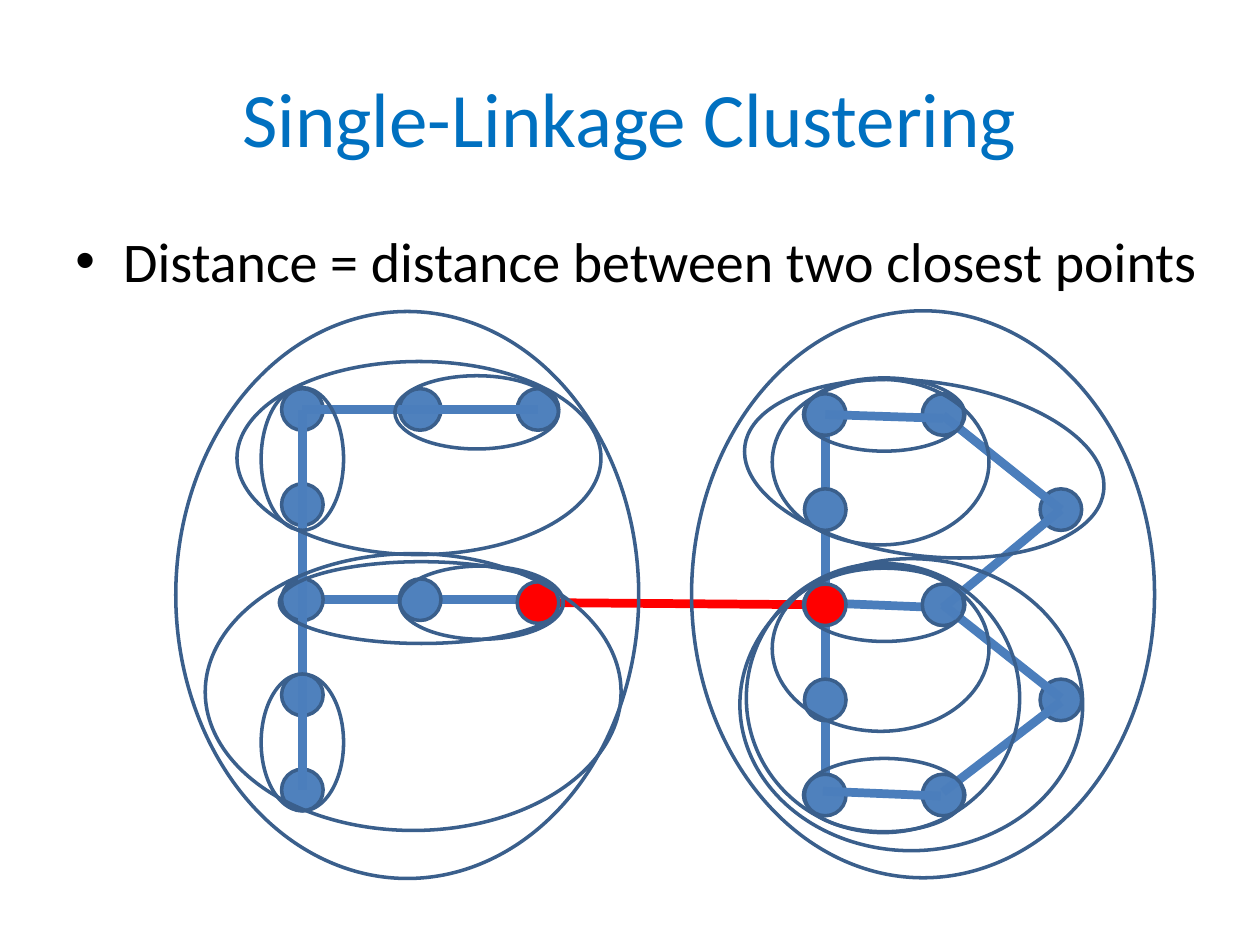
from dataclasses import dataclass
from typing import NamedTuple

from lxml.etree import SubElement
from pptx import Presentation
from pptx.dml.color import RGBColor
from pptx.enum.shapes import MSO_CONNECTOR as Connector, MSO_SHAPE as Shape
from pptx.enum.text import MSO_ANCHOR as Anchor, PP_ALIGN as Align
from pptx.oxml.ns import qn
from pptx.util import Inches, Pt


@dataclass(frozen=True)
class Theme:
    font: str = "Calibri"
    title: str = "0070C0"
    text: str = "000000"
    node: str = "4F81BD"
    outline: str = "3A5F8C"
    edge: str = "4B7EBC"
    closest: str = "FF0000"
    title_size: int = 44
    body_size: int = 32
    outline_width: int = 2
    edge_width: int = 5


class Spot(NamedTuple):
    """A place counted in columns and rows of a letter's grid."""
    col: float
    row: float


class Edge(NamedTuple):
    start: Spot
    end: Spot


class Cluster(NamedTuple):
    """An ellipse: centre, width in columns, height in rows, rotation."""
    centre: Spot
    cols: float
    rows: float
    angle: float = 0


@dataclass(frozen=True)
class Letter:
    left: float
    top: float
    nodes: list[Spot]
    closest: Spot
    outer: Cluster
    back_edges: list[Edge]
    front_edges: list[Edge]
    clusters: list[Cluster]

    def place(self, spot: Spot) -> tuple[float, float]:
        return self.left + spot.col * COLUMN, self.top + spot.row * ROW


THEME = Theme()
WIDTH, HEIGHT = 10, 7.5
COLUMN, ROW = 1.87 / 2, 3.02 / 4
NODE = 0.33

LETTER_F = Letter(
    left=2.4, top=3.25,
    nodes=[Spot(0, row) for row in range(5)]
    + [Spot(col, 0) for col in (1, 2)] + [Spot(1, 2)],
    closest=Spot(2, 2.03),
    outer=Cluster(Spot(0.89, 1.95), 3.93, 5.96),
    back_edges=[Edge(Spot(0, 2), Spot(2, 2))],
    front_edges=[Edge(Spot(0, 0), Spot(2, 0)), Edge(Spot(0, 0), Spot(0, 4))],
    clusters=[
        Cluster(Spot(1.48, 0.03), 1.39, 0.77),
        Cluster(Spot(1.52, 2.03), 1.39, 0.77),
        Cluster(Spot(0, 3.5), 0.7, 1.44),
        Cluster(Spot(0, 0.52), 0.7, 1.5),
        Cluster(Spot(1.01, 2.03), 2.41, 0.86),
        Cluster(Spot(0.94, 2.97), 3.53, 2.91),
        Cluster(Spot(0.99, 0.51), 3.09, 2.03),
    ],
)
LETTER_B = Letter(
    left=6.55, top=3.29,
    nodes=[Spot(0, row) for row in (0, 1, 3, 4)]
    + [Spot(1, row) for row in (0, 2, 4)] + [Spot(2, row) for row in (1, 3)],
    closest=Spot(0, 2),
    outer=Cluster(Spot(0.83, 1.89), 3.93, 5.96),
    back_edges=[
        Edge(Spot(-0.02, 1.98), Spot(0.98, 2.03)),
        Edge(Spot(0, 0.04), Spot(0, 4.02)),
    ],
    front_edges=[
        Edge(Spot(0, 0), Spot(1, 0.04)),
        Edge(Spot(-0.02, 3.96), Spot(0.98, 4.01)),
        Edge(Spot(1, 0.01), Spot(2, 1)),
        Edge(Spot(1, 2), Spot(2, 2.98)),
        Edge(Spot(1, 2.03), Spot(2, 1)),
        Edge(Spot(1, 3.97), Spot(2, 3.02)),
    ],
    clusters=[Cluster(Spot(0.5, row), 1.37, 0.77) for row in (2, 0, 4)]
    + [Cluster(Spot(0.47, row), 1.84, 1.74) for row in (0.5, 2.46)]
    + [
        Cluster(Spot(0.49, 2.98), 2.32, 2.83),
        Cluster(Spot(0.73, 3.05), 2.91, 3.07),
        Cluster(Spot(0.84, 0.57), 3.07, 1.83, 7.2),
    ],
)
LETTERS = (LETTER_F, LETTER_B)


def color(value: str) -> RGBColor:
    return RGBColor.from_string(value)


def draw_line(page, start: tuple[float, float], end: tuple[float, float], stroke: str) -> None:
    line = page.shapes.add_connector(
        Connector.STRAIGHT, *(Inches(value) for value in (*start, *end)))
    line.line.color.rgb = color(stroke)
    line.line.width = Pt(THEME.edge_width)
    SubElement(line._element.spPr, qn("a:effectLst"))


def draw_edges(page, letter: Letter, edges: list[Edge]) -> None:
    for edge in edges:
        draw_line(page, letter.place(edge.start), letter.place(edge.end), THEME.edge)


def draw_ellipse(page, centre: tuple[float, float], width: float, height: float,
                 fill: str | None = None, angle: float = 0) -> None:
    x, y = centre
    ellipse = page.shapes.add_shape(
        Shape.OVAL, Inches(x - width / 2), Inches(y - height / 2),
        Inches(width), Inches(height))
    ellipse.shadow.inherit = False
    ellipse.rotation = angle
    ellipse.line.color.rgb = color(THEME.outline)
    ellipse.line.width = Pt(THEME.outline_width)
    if fill:
        ellipse.fill.solid()
        ellipse.fill.fore_color.rgb = color(fill)
    else:
        ellipse.fill.background()


def draw_cluster(page, letter: Letter, cluster: Cluster) -> None:
    draw_ellipse(page, letter.place(cluster.centre), cluster.cols * COLUMN,
                 cluster.rows * ROW, angle=cluster.angle)


def draw_text(page, text: str, top: float, width: float, height: float,
              size: int, ink: str, bullet: bool = False) -> None:
    """Top, width and height are shares of the slide's size."""
    box = page.shapes.add_textbox(
        Inches(0.05 * WIDTH), Inches(top * HEIGHT),
        Inches(width * WIDTH), Inches(height * HEIGHT))
    frame = box.text_frame
    frame.word_wrap = True
    frame.text = text
    frame.vertical_anchor = Anchor.TOP if bullet else Anchor.MIDDLE
    para = frame.paragraphs[0]
    para.alignment = Align.LEFT if bullet else Align.CENTER
    if bullet:
        props = para._p.get_or_add_pPr()
        props.set("marL", str(Inches(0.38)))
        props.set("indent", str(-Inches(0.38)))
        SubElement(props, qn("a:buFont"), typeface="Arial")
        SubElement(props, qn("a:buChar"), char="•")
    span = para.runs[0]
    span.font.name = THEME.font
    span.font.size = Pt(size)
    span.font.color.rgb = color(ink)


def main() -> None:
    deck = Presentation()
    deck.slide_width, deck.slide_height = Inches(WIDTH), Inches(HEIGHT)
    page = deck.slides.add_slide(deck.slide_layouts[6])

    # Link between the closest points, and the edges behind the nodes
    draw_line(page, LETTER_F.place(LETTER_F.closest),
              LETTER_B.place(LETTER_B.closest), THEME.closest)
    for letter in LETTERS:
        draw_edges(page, letter, letter.back_edges)

    # Title and definition
    draw_text(page, "Single-Linkage Clustering", 0.04, 0.9, 1 / 6,
              THEME.title_size, THEME.title)
    draw_text(page, "Distance = distance between two closest points",
              0.7 / 3, 0.967, 0.66, THEME.body_size, THEME.text, bullet=True)

    # Outer clusters, nodes, front edges, then the nested clusters
    for letter in LETTERS:
        draw_cluster(page, letter, letter.outer)
    for letter in LETTERS:
        for node in letter.nodes:
            draw_ellipse(page, letter.place(node), NODE, NODE, THEME.node)
        draw_ellipse(page, letter.place(letter.closest), NODE, NODE, THEME.closest)
    for letter in LETTERS:
        draw_edges(page, letter, letter.front_edges)
    for letter in LETTERS:
        for cluster in letter.clusters:
            draw_cluster(page, letter, cluster)

    deck.save("out.pptx")


if __name__ == "__main__":
    main()
